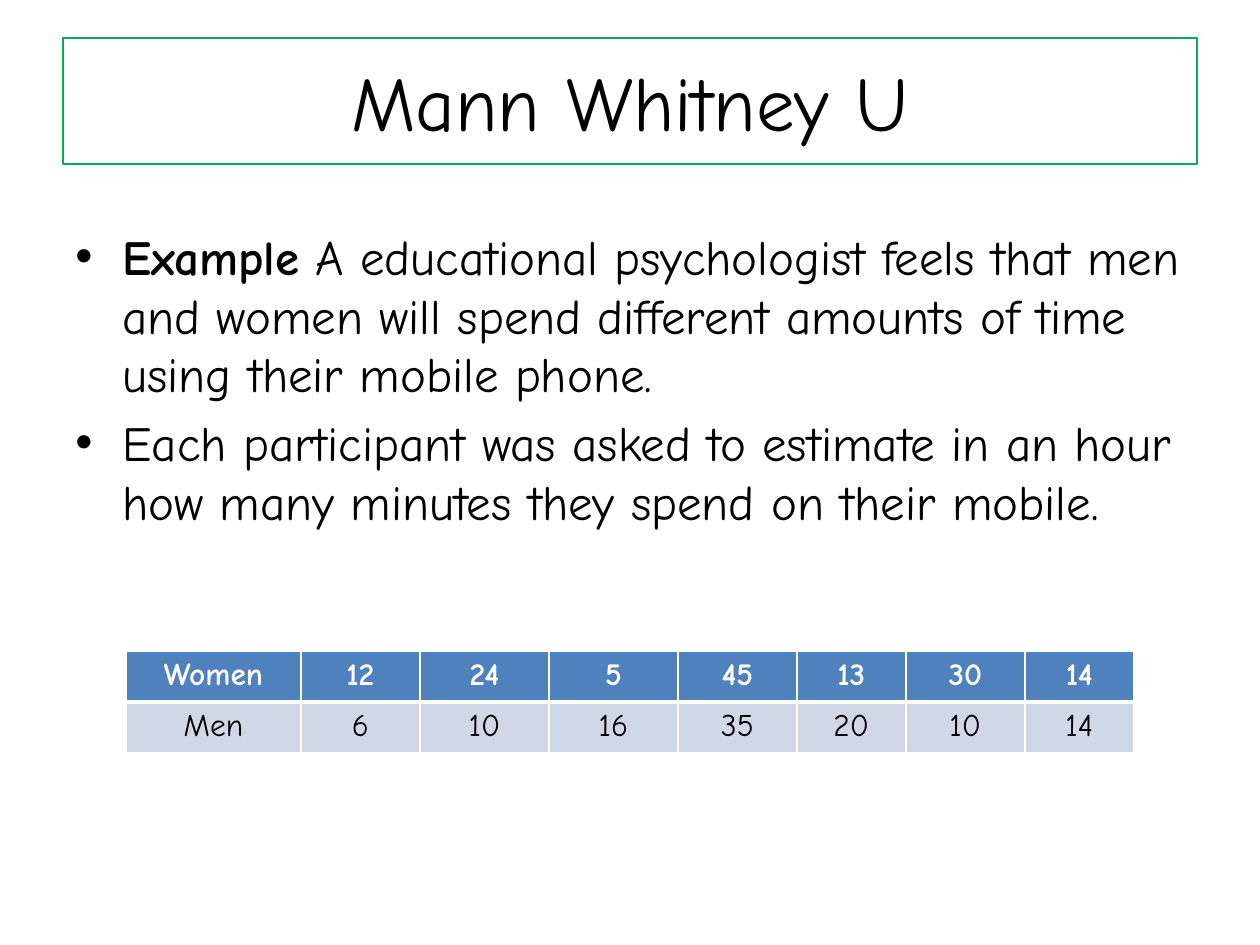
from lxml import etree
from pptx import Presentation
from pptx.dml.color import RGBColor
from pptx.enum.text import MSO_ANCHOR, PP_ALIGN
from pptx.oxml.ns import qn
from pptx.util import Emu, Pt

PX = 914400 // 126
FONT = "Comic Neue"
CENTER = PP_ALIGN.CENTER
MIDDLE = MSO_ANCHOR.MIDDLE
BLACK, WHITE, GREEN = "000000", "FFFFFF", "00B050"

TITLE_BOX = (63, 38, 1134, 126)
BODY_BOX = (63, 220, 1134, 624)
TABLE_BOX = (126, 651, 1008, 102)

BULLETS = [
    [("Example", True),
     (" A educational psychologist feels that men and women will spend different "
      "amounts of time using their mobile phone.", False)],
    [("Each participant was asked to estimate in an hour how many minutes they "
      "spend on their mobile.", False)],
]
MINUTES = [
    ["Women", 12, 24, 5, 45, 13, 30, 14],
    ["Men", 6, 10, 16, 35, 20, 10, 14],
]
COLUMN_WIDTHS = [175, 119, 129, 129, 119, 109, 119, 109]
ROW_STYLES = [
    {"fill": "4F81BD", "color": WHITE, "bold": True,
     "borders": {"lnL": 1, "lnR": 1, "lnT": 1, "lnB": 3}},
    {"fill": "D0D8E8", "color": BLACK, "bold": False,
     "borders": {"lnL": 1, "lnR": 1, "lnB": 1}},
]


def px(length):
    """Turn whole pixels into EMU."""
    return Emu(length * PX)


def rgb(value):
    """Turn a hex string into a colour."""
    return RGBColor.from_string(value)


def add_run(paragraph, text, size, color=BLACK, bold=False):
    """Append one formatted run to a paragraph."""
    run = paragraph.add_run()
    run.text = text
    for name, value in {"name": FONT, "size": Pt(size), "bold": bold}.items():
        setattr(run.font, name, value)
    run.font.color.rgb = rgb(color)


def place_title(slide, box):
    """Place the outlined slide title."""
    title = slide.shapes.title
    for name, length in zip(("left", "top", "width", "height"), box):
        setattr(title, name, px(length))
    title.line.color.rgb = rgb(GREEN)
    title.line.width = Pt(0.75)
    title.text_frame.vertical_anchor = MIDDLE
    heading = title.text_frame.paragraphs[0]
    heading.alignment = CENTER
    add_run(heading, "Mann Whitney U", 44)


def set_bullet(paragraph, indent):
    """Give a paragraph a round bullet with a hanging indent."""
    properties = paragraph._p.get_or_add_pPr()
    properties.set("marL", str(px(indent)))
    properties.set("indent", str(-px(indent)))
    etree.SubElement(properties, qn("a:buFont"), typeface="Arial")
    etree.SubElement(properties, qn("a:buChar"), char="•")


def place_example(slide, box):
    """Place the bulleted description of the study."""
    frame = slide.shapes.add_textbox(*map(px, box)).text_frame
    frame.word_wrap = True
    for index, bullet in enumerate(BULLETS):
        paragraph = frame.add_paragraph() if index else frame.paragraphs[0]
        paragraph.space_before = Pt(5.6)
        set_bullet(paragraph, 47)
        for text, bold in bullet:
            add_run(paragraph, text, 28, bold=bold)


def set_borders(cell, borders):
    """Draw white borders of the given point widths on a cell."""
    properties = cell._tc.get_or_add_tcPr()
    for side, width in borders.items():
        line = etree.SubElement(properties, qn(f"a:{side}"), w=str(Pt(width)))
        fill = etree.SubElement(line, qn("a:solidFill"))
        etree.SubElement(fill, qn("a:srgbClr"), val=WHITE)


def place_minutes(slide, box):
    """Place the table of estimated minutes by group."""
    table = slide.shapes.add_table(len(MINUTES), len(COLUMN_WIDTHS), *map(px, box)).table
    for column, width in zip(table.columns, COLUMN_WIDTHS):
        column.width = px(width)
    for row, values, style in zip(table.rows, MINUTES, ROW_STYLES):
        row.height = px(box[3] // len(MINUTES))
        for cell, value in zip(row.cells, values):
            set_borders(cell, style["borders"])
            cell.fill.solid()
            cell.fill.fore_color.rgb = rgb(style["fill"])
            paragraph = cell.text_frame.paragraphs[0]
            paragraph.alignment = CENTER
            add_run(paragraph, str(value), 18, style["color"], style["bold"])


def main():
    """Build and save the slide."""
    deck = Presentation()
    deck.slide_width, deck.slide_height = px(1260), px(945)
    slide = deck.slides.add_slide(deck.slide_layouts[5])
    place_title(slide, TITLE_BOX)
    place_example(slide, BODY_BOX)
    place_minutes(slide, TABLE_BOX)
    deck.save("out.pptx")


if __name__ == "__main__":
    main()
